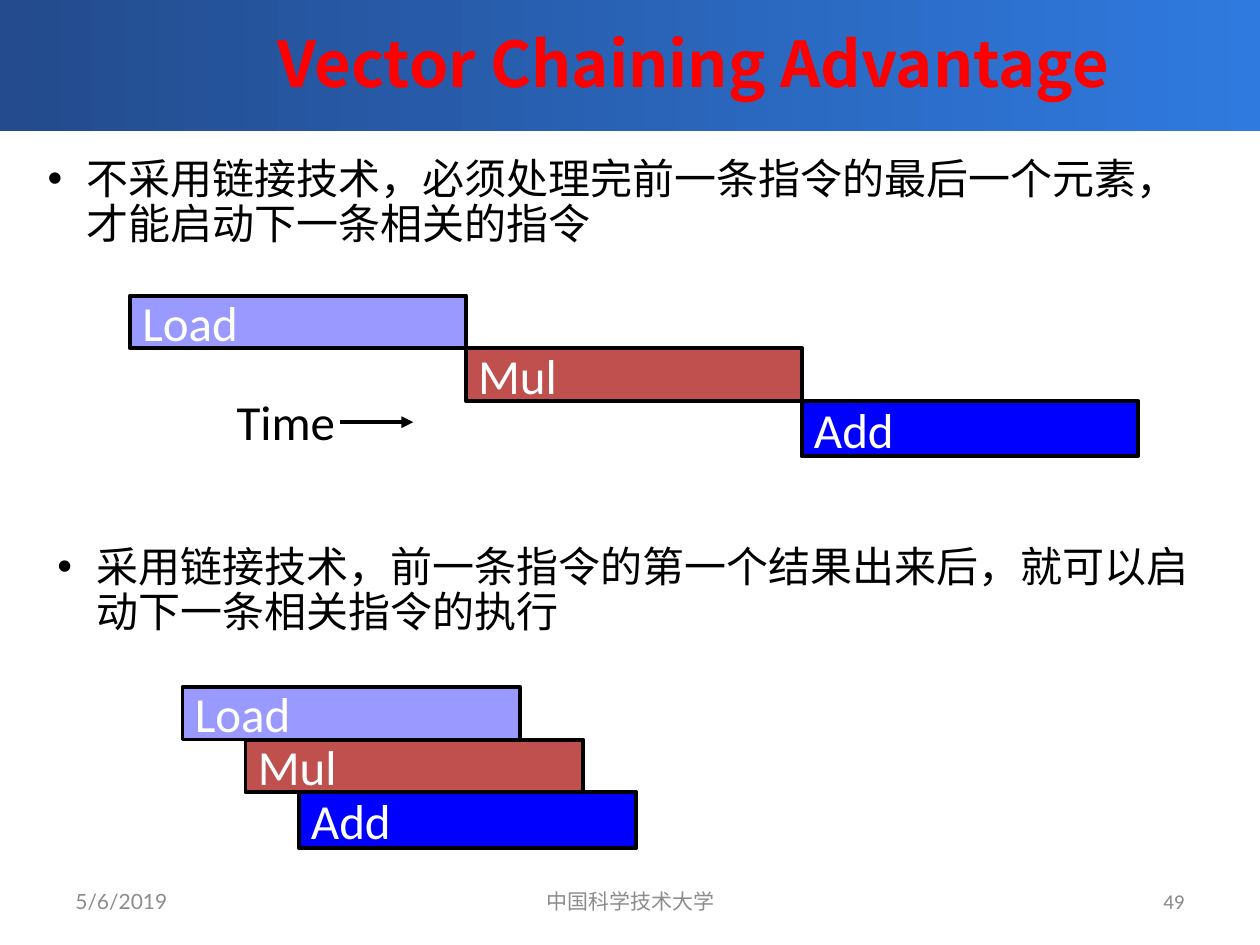
from lxml import etree
from pptx import Presentation
from pptx.dml.color import RGBColor
from pptx.enum.shapes import MSO_CONNECTOR, MSO_SHAPE
from pptx.enum.text import MSO_ANCHOR, PP_ALIGN
from pptx.oxml.ns import qn
from pptx.util import Cm, Pt

CJK = "Noto Sans CJK SC"
STAGES = [("Load", "9999FF", 1.06), ("Mul", "C0504D", 1.06), ("Add", "0000FF", 1.12)]


def colour(hex_text):
    return RGBColor.from_string(hex_text)


def style(para, size, name, hex_text, bold=False):
    font = para.font
    font.size, font.name, font.bold = Pt(size), name, bold
    font.color.rgb = colour(hex_text)
    # Use the same typeface for Chinese characters
    latin = font._element.find(qn("a:latin"))
    east_asian = etree.Element(qn("a:ea"), typeface=CJK)
    latin.addnext(east_asian)


def add_text(page, box, text, size, name, hex_text,
             align=PP_ALIGN.LEFT, bold=False, wrap=True, bullet=False):
    frame = page.shapes.add_textbox(*map(Cm, box)).text_frame
    frame.word_wrap = wrap
    frame.vertical_anchor = MSO_ANCHOR.MIDDLE
    para = frame.paragraphs[0]
    para.text = text
    para.alignment = align
    if bullet:
        para.line_spacing = 0.9
        properties = para._p.get_or_add_pPr()
        properties.set("marL", str(Cm(0.79)))
        properties.set("indent", str(-Cm(0.79)))
        etree.SubElement(properties, qn("a:buFont"), typeface="Arial")
        etree.SubElement(properties, qn("a:buChar"), char="•")
    style(para, size, name, hex_text, bold)


def add_header(page, box):
    left, top, width, height = box
    band = page.shapes.add_shape(MSO_SHAPE.RECTANGLE, *map(Cm, box))
    band.shadow.inherit = False
    band.line.fill.background()
    band.fill.gradient()
    band.fill.gradient_angle = 0
    for stop, position, hex_text in zip(band.fill.gradient_stops, (0, 1), ("234B8D", "2F7ADF")):
        stop.position = position
        stop.color.rgb = colour(hex_text)
    add_text(page, (left + 2.54, top + 0.08, width - 2.54, 2.51), "Vector Chaining Advantage",
             36, CJK, "FF0000", PP_ALIGN.CENTER, bold=True)


def add_stages(page, left, top, width, offsets):
    """Stack the pipeline stages, each shifted right by its offset."""
    for (label, fill, height), offset in zip(STAGES, offsets):
        bar = page.shapes.add_shape(MSO_SHAPE.RECTANGLE, Cm(left + offset), Cm(top),
                                    Cm(width), Cm(height))
        bar.shadow.inherit = False
        bar.fill.solid()
        bar.fill.fore_color.rgb = colour(fill)
        bar.line.color.rgb = colour("000000")
        bar.line.width = Pt(2.25)
        bar.text_frame.vertical_anchor = MSO_ANCHOR.MIDDLE
        para = bar.text_frame.paragraphs[0]
        para.text = label
        para.alignment = PP_ALIGN.LEFT
        style(para, 28, "Calibri", "FFFFFF")
        top += height


def add_time_arrow(page, left, top):
    add_text(page, (left, top, 2.51, 1.45), "Time", 28, "Calibri", "000000", wrap=False)
    start, middle = left + 2.34, top + 0.74
    arrow = page.shapes.add_connector(MSO_CONNECTOR.STRAIGHT, Cm(start), Cm(middle),
                                      Cm(start + 1.47), Cm(middle))
    arrow.line.color.rgb = colour("000000")
    arrow.line.width = Pt(2.25)
    etree.SubElement(arrow.line._get_or_add_ln(), qn("a:tailEnd"), type="triangle")
    etree.SubElement(arrow._element.spPr, qn("a:effectLst"))


def add_section(page, box, text, bars_left, bars_down, bar_width, offsets):
    """Place a bullet and, below it, its timing diagram."""
    left, top, width, height = box
    add_text(page, box, text, 24, CJK, "000000", bullet=True)
    add_stages(page, left + bars_left, top + bars_down, bar_width, offsets)


def add_footer(page, top):
    add_text(page, (1.27, top, 5.92, 1.02), "5/6/2019", 12, "Lato", "8C8C8C")
    add_text(page, (8.69, top, 8.05, 1.02), "中国科学技术大学", 12, "Lato", "8C8C8C",
             PP_ALIGN.CENTER)
    add_text(page, (18.21, top, 5.92, 1.02), "49", 12, "Calibri", "898989", PP_ALIGN.RIGHT)


def main():
    deck = Presentation()
    deck.slide_width, deck.slide_height = Cm(25.4), Cm(19.05)
    page = deck.slides.add_slide(deck.slide_layouts[6])

    add_header(page, (0, -0.08, 25.4, 2.72))
    # Without chaining: stages run one after another
    add_section(page, (0.71, 3.05, 23.7, 2.11),
                "不采用链接技术，必须处理完前一条指令的最后一个元素，才能启动下一条相关的指令",
                1.91, 2.91, 6.78, (0, 6.77, 13.54))
    add_time_arrow(page, 4.52, 7.77)
    # With chaining: stages overlap
    add_section(page, (0.91, 10.87, 23.85, 2.11),
                "采用链接技术，前一条指令的第一个结果出来后，就可以启动下一条相关指令的执行",
                2.77, 2.98, 6.81, (0, 1.27, 2.34))
    add_footer(page, 17.65)
    deck.save("out.pptx")


if __name__ == "__main__":
    main()
